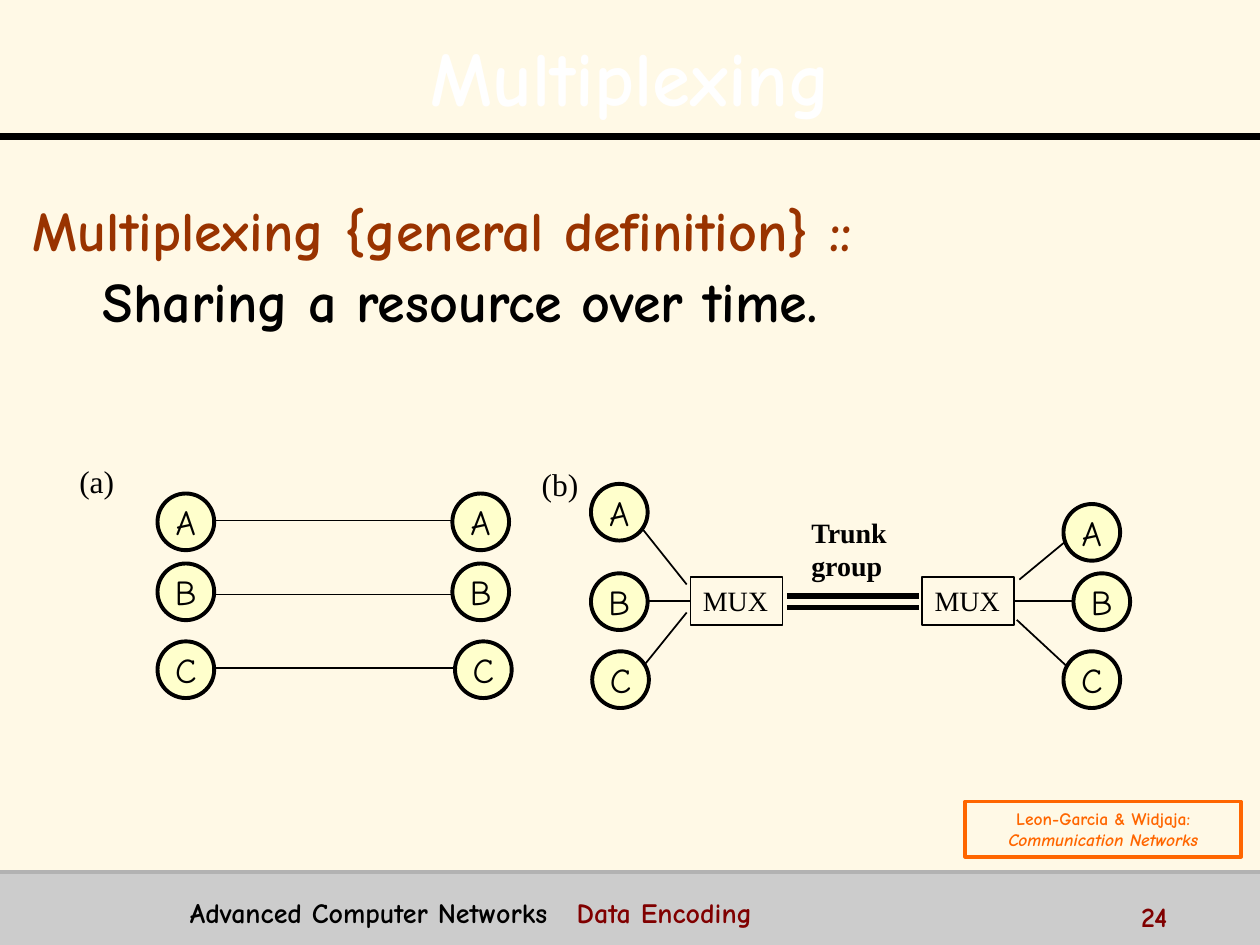
"""Build the Multiplexing slide with its two wiring diagrams."""
from typing import Any, NamedTuple, Optional

from lxml.etree import SubElement
from pptx import Presentation
from pptx.dml.color import RGBColor
from pptx.enum.shapes import MSO_CONNECTOR, MSO_SHAPE
from pptx.enum.text import MSO_ANCHOR, MSO_AUTO_SIZE, PP_ALIGN
from pptx.oxml import parse_xml
from pptx.oxml.ns import nsdecls, qn
from pptx.util import Pt

COMIC, TIMES = "Comic Neue", "Times New Roman"
BLACK, MAROON, ORANGE = "000000", "800000", "FF6600"
NODE_SIZE = 32.4
MUX_TOP, MUX_WIDTH, MUX_HEIGHT = 329.8, 52.6, 27.4


class Span(NamedTuple):
    text: str
    size: float
    font: str = COMIC
    color: str = BLACK
    bold: bool = False
    italic: bool = False


class Box(NamedTuple):
    left: float
    top: float
    width: float
    height: float


class Node(NamedTuple):
    label: str
    left: float
    top: float


class Wire(NamedTuple):
    x1: float
    y1: float
    x2: float
    y2: float
    width: float = 1
    color: str = BLACK


def rgb(code: str) -> RGBColor:
    return RGBColor.from_string(code)


def apply_format(target: Any, values: dict) -> None:
    for name, value in values.items():
        setattr(target, name, value)


def place(shape: Any, box: Box) -> None:
    apply_format(shape, {name: Pt(value) for name, value in box._asdict().items()})


def write(shape: Any, lines: list, frame_format: dict, paragraph_format: Optional[dict] = None) -> list:
    frame = shape.text_frame
    apply_format(frame, frame_format)
    for index, spans in enumerate(lines):
        paragraph = frame.add_paragraph() if index else frame.paragraphs[0]
        apply_format(paragraph, paragraph_format or {})
        for span in spans:
            run = paragraph.add_run()
            run.text = span.text
            apply_format(run.font, {"size": Pt(span.size), "bold": span.bold, "italic": span.italic})
            run.font.color.rgb = rgb(span.color)
            run.font.name = span.font
    return list(frame.paragraphs)


def add_label(slide: Any, box: Box, lines: list, wrap: bool = False) -> list:
    label = slide.shapes.add_textbox(*map(Pt, box))
    return write(label, lines, {"word_wrap": wrap})


def add_outline(slide: Any, preset: MSO_SHAPE, box: Box, line: Optional[str], width: float = 1,
                fill: Optional[str] = None) -> Any:
    shape = slide.shapes.add_shape(preset, *map(Pt, box))
    shape.shadow.inherit = False
    if fill:
        shape.fill.solid()
        shape.fill.fore_color.rgb = rgb(fill)
    else:
        shape.fill.background()
    if line:
        shape.line.color.rgb = rgb(line)
        shape.line.width = Pt(width)
    else:
        shape.line.fill.background()
    return shape


def add_wire(slide: Any, wire: Wire) -> Any:
    connector = slide.shapes.add_connector(MSO_CONNECTOR.STRAIGHT, *map(Pt, wire[:4]))
    connector.line.color.rgb = rgb(wire.color)
    connector.line.width = Pt(wire.width)
    SubElement(connector._element.spPr, qn("a:effectLst"))
    return connector


def add_node(slide: Any, node: Node) -> None:
    box = Box(node.left, node.top, NODE_SIZE, NODE_SIZE)
    circle = add_outline(slide, MSO_SHAPE.OVAL, box, BLACK, 2.25, "FFFFCC")
    write(circle, [[Span(node.label, 20)]],
          {"word_wrap": False, "vertical_anchor": MSO_ANCHOR.MIDDLE}, {"alignment": PP_ALIGN.CENTER})


def add_mux(slide: Any, left: float) -> Any:
    mux = add_outline(slide, MSO_SHAPE.RECTANGLE, Box(left, MUX_TOP, MUX_WIDTH, MUX_HEIGHT), BLACK)
    write(mux, [[Span("MUX", 16, TIMES)]],
          {"word_wrap": False, "vertical_anchor": MSO_ANCHOR.TOP}, {"alignment": PP_ALIGN.LEFT})
    return mux


def add_heading(slide: Any) -> None:
    title = slide.shapes.title
    place(title, Box(14.4, 9.4, 692, 62.6))
    heading = write(title, [[Span("Multiplexing", 44, color="FFFFFF", bold=True)]],
                    {"auto_size": MSO_AUTO_SIZE.NONE, "vertical_anchor": MSO_ANCHOR.MIDDLE},
                    {"alignment": PP_ALIGN.CENTER, "line_spacing": 1.1})[0]
    shadow = parse_xml(
        f'<a:effectLst {nsdecls("a")}><a:outerShdw dist="25400" dir="2700000">'
        '<a:srgbClr val="000000"/></a:outerShdw></a:effectLst>')
    heading.runs[0].font._element.find(qn("a:solidFill")).addnext(shadow)


def add_definition(slide: Any) -> None:
    body = slide.placeholders[1]
    place(body, Box(11.5, 112.3, 692, 324))
    lines = [[Span("Multiplexing {general definition} ::", 32, color="993300", bold=True)],
             [Span("Sharing a resource over time.", 32, bold=True)]]
    paragraphs = write(body, lines, {"auto_size": MSO_AUTO_SIZE.NONE}, {"line_spacing": 0.9})
    for paragraph, margin, gap in zip(paragraphs, (0, 40), (0, 6.4)):
        properties = paragraph._p.get_or_add_pPr()
        apply_format(paragraph, {"space_before": Pt(gap)})
        properties.set("marL", str(Pt(margin)))
        properties.set("indent", "0")
        SubElement(properties, qn("a:buNone"))


def add_footer(slide: Any) -> None:
    add_outline(slide, MSO_SHAPE.RECTANGLE, Box(0, 498.2, 720, 41.8), None, fill="CCCCCC")
    add_wire(slide, Wire(0, 77.8, 720, 77.8, 4))
    add_wire(slide, Wire(0, 498.2, 720, 498.2, 2, "B2B2B2"))
    course = add_label(slide, Box(101.5, 508.3, 524, 22.3), [
        [Span("Advanced Computer Networks\t", 16, bold=True),
         Span("Data Encoding", 16, color=MAROON, bold=True)]], True)[0]
    tabs = SubElement(course._p.get_or_add_pPr(), qn("a:tabLst"))
    SubElement(tabs, qn("a:tab"), pos=str(Pt(221)), algn="l")
    add_label(slide, Box(645, 510.5, 72, 18), [[Span("24", 16, color=MAROON, bold=True)]], True)


def add_diagrams(slide: Any) -> None:
    for y in (297.4, 339.8, 381.6):
        add_wire(slide, Wire(122, y, 259, y))
    sender_mux, receiver_mux = (add_mux(slide, left) for left in (394.6, 527))
    for wire in (Wire(367.2, 302.4, 392.4, 334), Wire(365.8, 383, 392.4, 350),
                 Wire(582.5, 331.2, 611.3, 307.4), Wire(581, 354.2, 611.3, 382.3),
                 Wire(449.6, 340.6, 524.9, 340.6, 3), Wire(449.6, 347, 524.9, 347, 3)):
        add_wire(slide, wire)
    middle = MUX_TOP + MUX_HEIGHT / 2
    add_wire(slide, Wire(367.2, middle, 394.6, middle)).end_connect(sender_mux, 1)
    add_wire(slide, Wire(579.6, middle, 613, middle)).begin_connect(receiver_mux, 3)
    columns = [((90, 282), (90, 322), (90, 366.5)),
               ((258.5, 282), (258.5, 322), (260, 366.5)),
               ((337.7, 276.5), (337.7, 327.6), (338.4, 372.2)),
               ((607.7, 288), (613.4, 327.6), (607.7, 372.2))]
    for column in columns:
        for label, corner in zip("ABC", column):
            add_node(slide, Node(label, *corner))
    add_label(slide, Box(38.2, 260.6, 34.6, 28.8), [[Span("(a)", 18, TIMES)]])
    add_label(slide, Box(302.4, 262, 35.3, 28.8), [[Span("(b)", 18, TIMES)]])
    add_label(slide, Box(456.5, 291, 58.3, 45.4),
              [[Span(word, 16, TIMES, bold=True)] for word in ("Trunk", "group")])


def add_citation(slide: Any) -> None:
    citation = add_outline(slide, MSO_SHAPE.RECTANGLE, Box(551.5, 458, 157.7, 31.7), ORANGE, 2)
    write(citation, [[Span("Leon-Garcia & Widjaja:", 10, color=ORANGE, bold=True)],
                     [Span("Communication Networks", 10, color=ORANGE, bold=True, italic=True)]],
          {"vertical_anchor": MSO_ANCHOR.MIDDLE}, {"alignment": PP_ALIGN.CENTER})


def main() -> None:
    deck = Presentation()
    apply_format(deck, {"slide_width": Pt(720), "slide_height": Pt(540)})
    slide = deck.slides.add_slide(deck.slide_layouts[1])
    slide.background.fill.solid()
    slide.background.fill.fore_color.rgb = rgb("FFF9E6")
    for add_part in (add_heading, add_definition, add_footer, add_diagrams, add_citation):
        add_part(slide)
    deck.save("out.pptx")


if __name__ == "__main__":
    main()
